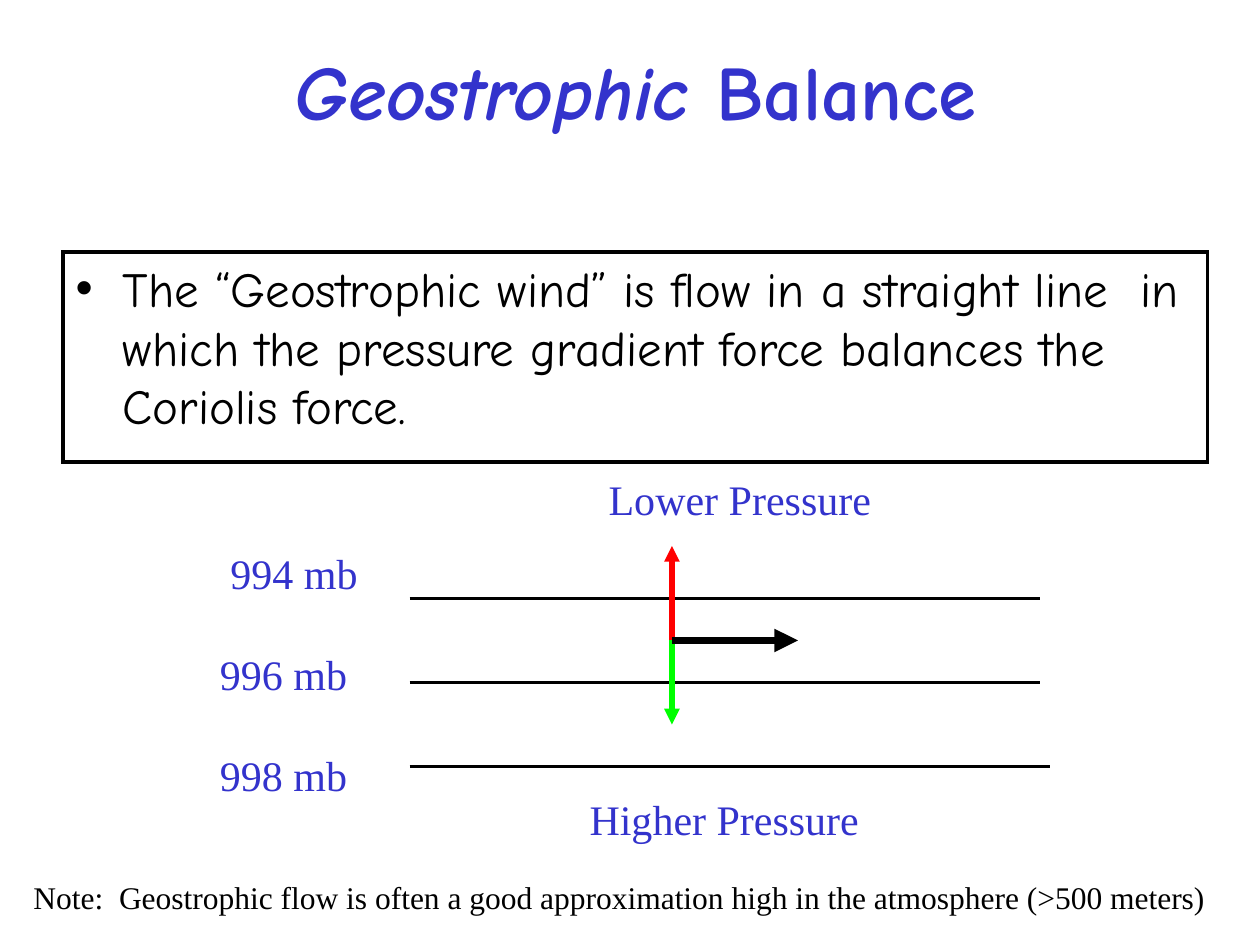
from dataclasses import dataclass

import pptx
import pptx.dml.color
import pptx.enum.shapes
import pptx.enum.text
import pptx.oxml.ns
import pptx.util
from lxml import etree

Pt = pptx.util.Pt
RGBColor = pptx.dml.color.RGBColor

BLUE = RGBColor(0x33, 0x33, 0xCC)
BLACK = RGBColor(0, 0, 0)
RED = RGBColor(0xFF, 0, 0)
GREEN = RGBColor(0, 0xFF, 0)
HAND = "Comic Neue"
SERIF = "Times New Roman"


@dataclass
class Segment:
    start: tuple[float, float]
    end: tuple[float, float]
    color: RGBColor = BLACK
    weight: float = 2.25
    arrow: bool = False


@dataclass
class Label:
    lines: list[str]
    left: float
    top: float
    width: float
    height: float
    size: float = 24
    color: RGBColor = BLUE
    gap: float = 0


def add_text(paragraph, text: str, *, size: float, font: str, color: RGBColor,
             bold: bool = False, italic: bool = False) -> None:
    run = paragraph.add_run()
    run.text = text
    run.font.size = Pt(size)
    run.font.name = font
    run.font.color.rgb = color
    run.font.bold = bold
    run.font.italic = italic


def place(shape, left: float, top: float, width: float, height: float) -> None:
    shape.left, shape.top = Pt(left), Pt(top)
    shape.width, shape.height = Pt(width), Pt(height)


def draw_segment(slide, segment: Segment) -> None:
    connector = slide.shapes.add_connector(
        pptx.enum.shapes.MSO_CONNECTOR.STRAIGHT,
        *(Pt(value) for value in segment.start + segment.end))
    connector.line.color.rgb = segment.color
    connector.line.width = Pt(segment.weight)
    if segment.arrow:
        outline = connector.line._get_or_add_ln()
        etree.SubElement(outline, pptx.oxml.ns.qn("a:tailEnd"), type="triangle")
    etree.SubElement(connector._element.spPr, pptx.oxml.ns.qn("a:effectLst"))


def draw_label(slide, label: Label) -> None:
    box = slide.shapes.add_textbox(
        Pt(label.left), Pt(label.top), Pt(label.width), Pt(label.height))
    frame = box.text_frame
    frame.word_wrap = False
    frame.auto_size = pptx.enum.text.MSO_AUTO_SIZE.SHAPE_TO_FIT_TEXT
    for index, line in enumerate(label.lines):
        paragraph = frame.add_paragraph() if index else frame.paragraphs[0]
        if index:
            paragraph.space_before = Pt(label.gap)
        add_text(paragraph, line, size=label.size, font=SERIF, color=label.color)


def main() -> None:
    presentation = pptx.Presentation()
    presentation.slide_width, presentation.slide_height = Pt(720), Pt(540)
    slide = presentation.slides.add_slide(presentation.slide_layouts[1])

    heading = slide.shapes.title
    place(heading, 24, 6, 678, 90)
    heading.text_frame.vertical_anchor = pptx.enum.text.MSO_ANCHOR.MIDDLE
    heading_line = heading.text_frame.paragraphs[0]
    heading_line.alignment = pptx.enum.text.PP_ALIGN.CENTER
    for words, italic in (("Geostrophic", True), (" Balance", False)):
        add_text(heading_line, words, size=44, font=HAND, color=BLUE,
                 bold=True, italic=italic)

    definition = slide.placeholders[1]
    place(definition, 36, 144, 654, 120)
    definition.line.color.rgb = BLACK
    definition.line.width = Pt(2.25)
    etree.SubElement(definition.line._get_or_add_ln(),
                     pptx.oxml.ns.qn("a:miter"), lim="800000")
    definition.text_frame.auto_size = pptx.enum.text.MSO_AUTO_SIZE.NONE
    add_text(definition.text_frame.paragraphs[0],
             "The “Geostrophic wind” is flow in a straight line  in which the "
             "pressure gradient force balances the Coriolis force.",
             size=28, font=HAND, color=BLACK)

    isobar_left, isobar_top, isobar_gap = 234, 342, 48
    isobars = [
        Segment((isobar_left, isobar_top + row * isobar_gap),
                (right, isobar_top + row * isobar_gap))
        for row, right in enumerate((594, 594, 600))
    ]
    air_parcel = (384, 366)
    pressure_gradient = Segment(air_parcel, (384, 312), RED, 3, True)
    coriolis = Segment(air_parcel, (384, 414), GREEN, 3, True)
    wind = Segment(air_parcel, (456, 366), BLACK, 4.5, True)
    for segment in (*isobars, pressure_gradient, coriolis, wind):
        draw_segment(slide, segment)

    labels = [
        Label([" 994 mb", "996 mb", "998 mb"], 118.6, 309.2, 93, 151, gap=29),
        Label(["Lower Pressure"], 340.7, 267, 168, 36),
        Label(["Higher Pressure"], 329.8, 450, 172, 36),
        Label(["Note:  Geostrophic flow is often a good approximation high in "
               "the atmosphere (>500 meters)"],
              12, 498, 688, 29, size=18, color=BLACK),
    ]
    for label in labels:
        draw_label(slide, label)

    presentation.save("out.pptx")


if __name__ == "__main__":
    main()
